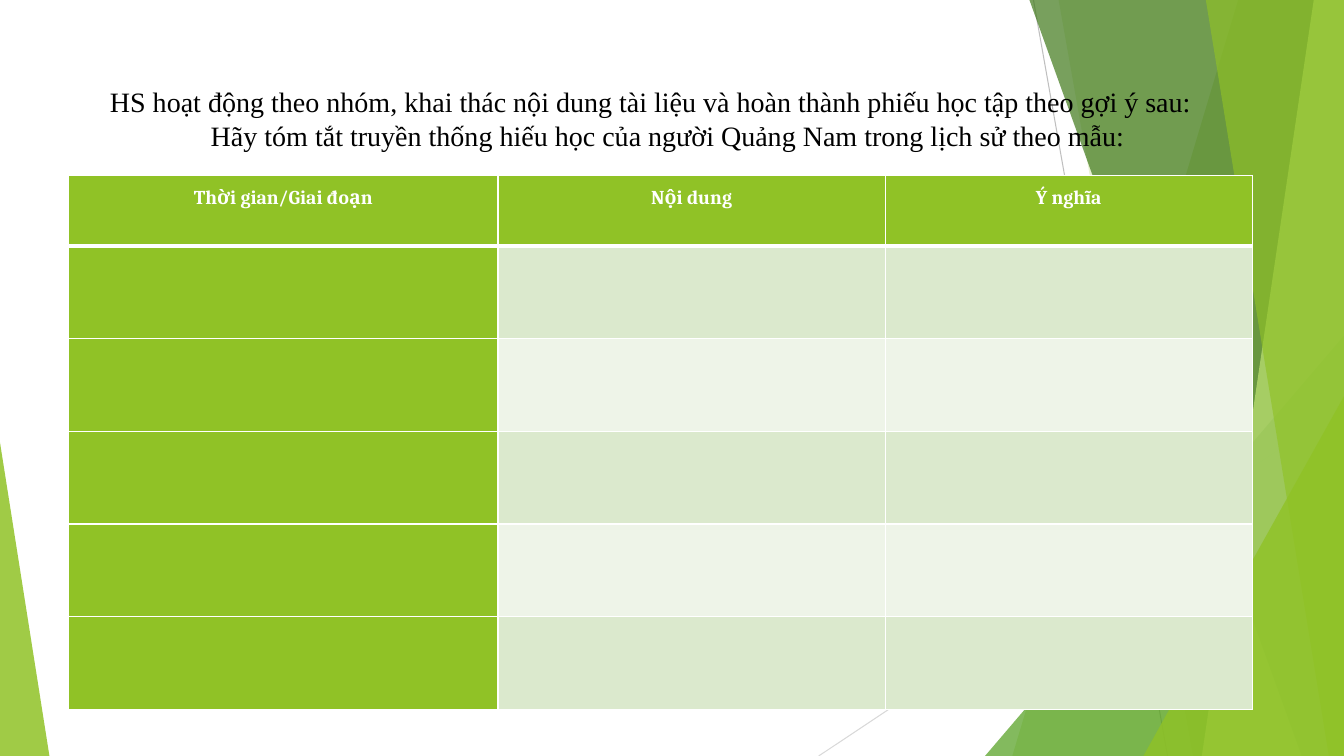
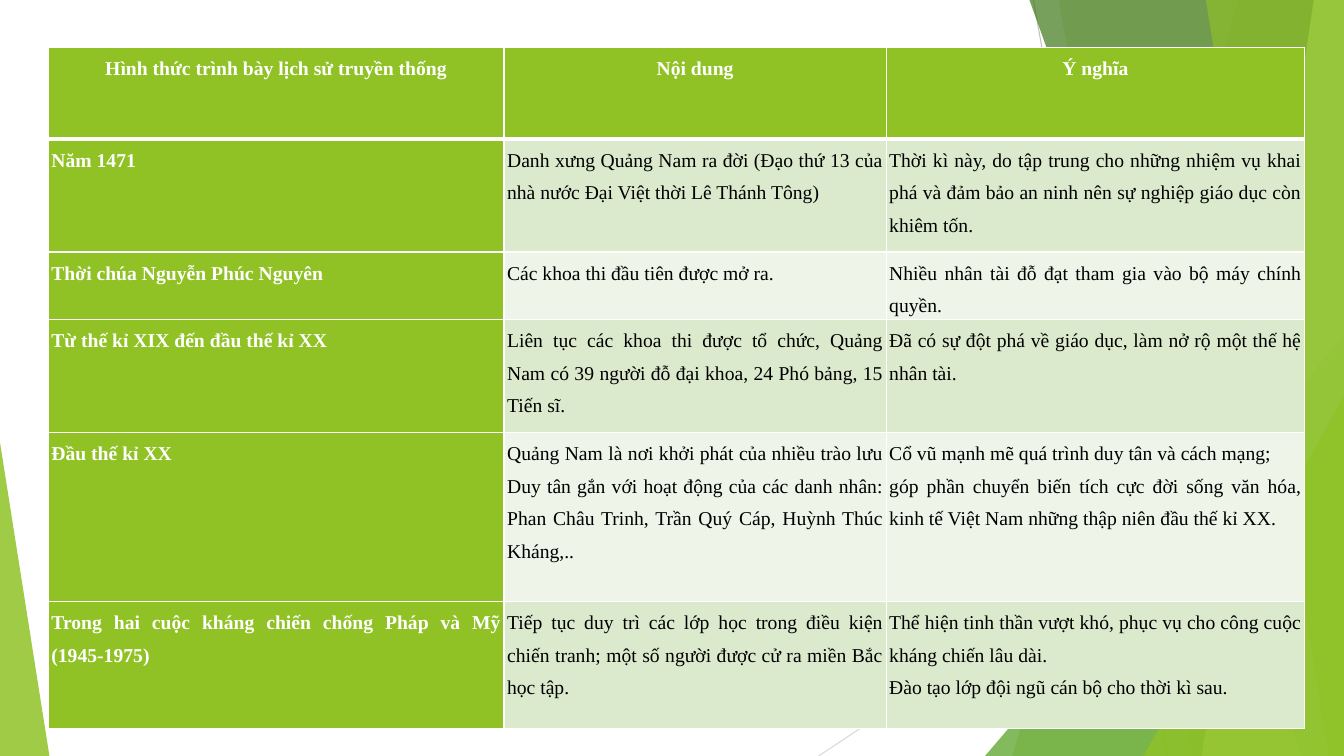
from lxml import etree
from pptx import Presentation
from pptx import util as u
from pptx.dml.color import RGBColor
from pptx.enum import shapes, text
from pptx.oxml import ns

COLOURS = {
    "lime": "90C226", "green": "54A021", "forest": "3F7819", "pale": "C0E474",
    "band": "DBE9CD", "light": "EEF4E8", "white": "FFFFFF", "black": "000000",
    "grey": "BFBFBF", "silver": "D9D9D9",
}
ALIGN = text.PP_ALIGN
SERIF = "Times New Roman"
WIDTH, HEIGHT = 13.33, 7.5


def write(frame, lines, paragraph_format, font_format, colour):
    frame.text = "\n".join(lines)
    for paragraph in frame.paragraphs:
        for name, value in paragraph_format.items():
            setattr(paragraph, name, value)
        for run in paragraph.runs:
            for name, value in font_format.items():
                setattr(run.font, name, value)
            run.font.color.rgb = RGBColor.from_string(COLOURS[colour])


def add_grid(slide, left, top, widths, heights, rows, font, inset):
    grid = slide.shapes.add_table(
        len(heights), len(widths), u.Inches(left), u.Inches(top),
        u.Inches(sum(widths)), u.Inches(sum(heights))).table
    for column, width in zip(grid.columns, widths):
        column.width = u.Inches(width)
    for r, (row, height) in enumerate(zip(rows, heights)):
        grid.rows[r].height = u.Inches(height)
        for c, lines in enumerate(row):
            cell = grid.cell(r, c)
            heading = r == 0 or c == 0
            fill = "lime" if heading else "band" if r % 2 else "light"
            margins = {"margin_left": inset, "margin_right": inset,
                       "margin_top": 0, "margin_bottom": 0}
            for name, value in margins.items():
                setattr(cell, name, u.Inches(value))
            write(cell.text_frame, lines,
                  {"alignment": ALIGN.JUSTIFY if r else ALIGN.CENTER, "line_spacing": 1.5},
                  {"size": u.Pt(14), "name": font, "bold": heading},
                  "white" if heading else "black")
            cell.fill.solid()
            cell.fill.fore_color.rgb = RGBColor.from_string(COLOURS[fill])
            properties = cell._tc.get_or_add_tcPr()
            for position, side in enumerate("LRTB"):
                thick = (r, side) in [(0, "B"), (1, "T")]
                border = etree.Element(ns.qn(f"a:ln{side}"), w=str(u.Pt(3 if thick else 1)))
                paint = etree.SubElement(border, ns.qn("a:solidFill"))
                etree.SubElement(paint, ns.qn("a:srgbClr"), val=COLOURS["white"])
                properties.insert(position, border)


prs = Presentation()
prs.slide_width, prs.slide_height = u.Inches(WIDTH), u.Inches(HEIGHT)
task = prs.slides.add_slide(prs.slide_layouts[5])
answer = prs.slides.add_slide(prs.slide_layouts[6])

backdrop = task.shapes.add_group_shape()
rays = [
    ((10.25, 0, 11.58, HEIGHT), "grey"),
    ((WIDTH, 4.03, 8.12, HEIGHT), "silver"),
]
for ends, colour in rays:
    ray = backdrop.shapes.add_connector(
        shapes.MSO_CONNECTOR.STRAIGHT, *[u.Inches(end) for end in ends])
    ray.line.color.rgb = RGBColor.from_string(COLOURS[colour])
    ray.line.width = u.Pt(0.75)
    etree.SubElement(ray.element.spPr, ns.qn("a:effectLst"))

facets = [
    ("blade", (12.28, 10.04), "lime", 30),
    ("blade", (10.5, 11.83), "lime", 20),
    ("corner", (9.77, 3.33, 3.56, 1), "green", 72),
    ("blade", (10.21, 12.91), "forest", 70),
    ("blade", (13.03, 11.92), "pale", 70),
    ("blade", (11.96, 13.18), "lime", 65),
    ("corner", (11.34, 3.93, 1.99, 1), "lime", 80),
    ("corner", (0, 4.39, 0.49, 0), "lime", 85),
]
for kind, place, colour, opacity in facets:
    if kind == "blade":
        upper, lower = place
        outline = [(u.Inches(x), u.Inches(y)) for x, y in
                   [(upper, 0), (WIDTH, 0), (WIDTH, HEIGHT), (lower, HEIGHT)]]
        builder = backdrop.shapes.build_freeform(*outline[0])
        builder.add_line_segments(outline[1:], close=True)
        facet = builder.convert_to_shape()
    else:
        left, top, width, apex = place
        facet = backdrop.shapes.add_shape(
            shapes.MSO_SHAPE.ISOSCELES_TRIANGLE, u.Inches(left), u.Inches(top),
            u.Inches(width), u.Inches(HEIGHT - top))
        facet.adjustments[0] = apex
    facet.shadow.inherit = False
    facet.line.fill.background()
    facet.fill.solid()
    facet.fill.fore_color.rgb = RGBColor.from_string(COLOURS[colour])
    tint = next(facet.element.spPr.iter(ns.qn("a:srgbClr")))
    etree.SubElement(tint, ns.qn("a:alpha"), val=str(opacity * 1000))

for number, identity in enumerate(backdrop.element.iter(ns.qn("p:cNvPr")), 100):
    identity.set("id", str(number))
prs.slide_master.shapes.element.insert(2, backdrop.element)

instruction = task.shapes.title
box = {"left": 0.99, "top": 0.79, "width": 12, "height": 0.77}
for name, value in box.items():
    setattr(instruction, name, u.Inches(value))
frame_format = {"word_wrap": True, "auto_size": text.MSO_AUTO_SIZE.NONE,
                "vertical_anchor": text.MSO_ANCHOR.MIDDLE}
for name, value in frame_format.items():
    setattr(instruction.text_frame, name, value)
write(instruction.text_frame, [
    "HS hoạt động theo nhóm, khai thác nội dung tài liệu và hoàn thành phiếu học tập theo gợi ý sau:",
    "Hãy tóm tắt truyền thống hiếu học của người Quảng Nam trong lịch sử theo mẫu:",
], {"alignment": ALIGN.JUSTIFY}, {"size": u.Pt(20), "name": SERIF}, "black")
request = instruction.text_frame.paragraphs[1]._p.get_or_add_pPr()
request.set("marL", "0")
request.set("indent", str(u.Inches(1)))

worksheet = [[["Thời gian/Giai đoạn"], ["Nội dung"], ["Ý nghĩa"]]] + [[[], [], []]] * 5
add_grid(task, 0.68, 1.74, [4.26, 3.84, 3.64], [0.7] + [0.92] * 5, worksheet, "Cambria", 0.07)

history = [
    [["Hình thức trình bày lịch sử truyền thống"], ["Nội dung"], ["Ý nghĩa"]],
    [["Năm 1471"],
     ["Danh xưng Quảng Nam ra đời (Đạo thứ 13 của nhà nước Đại Việt thời Lê Thánh Tông)"],
     ["Thời kì này, do tập trung cho những nhiệm vụ khai phá và đảm bảo an ninh "
      "nên sự nghiệp giáo dục còn khiêm tốn."]],
    [["Thời chúa Nguyễn Phúc Nguyên"],
     ["Các khoa thi đầu tiên được mở ra."],
     ["Nhiều nhân tài đỗ đạt tham gia vào bộ máy chính quyền."]],
    [["Từ thế kỉ XIX đến đầu thế kỉ XX"],
     ["Liên tục các khoa thi được tổ chức, Quảng Nam có 39 người đỗ đại khoa, "
      "24 Phó bảng, 15 Tiến sĩ."],
     ["Đã có sự đột phá về giáo dục, làm nở rộ một thế hệ nhân tài."]],
    [["Đầu thế kỉ XX"],
     ["Quảng Nam là nơi khởi phát của nhiều trào lưu Duy tân gắn với hoạt động của "
      "các danh nhân: Phan Châu Trinh, Trần Quý Cáp, Huỳnh Thúc Kháng,.."],
     ["Cổ vũ mạnh mẽ quá trình duy tân và cách mạng;",
      "góp phần chuyển biến tích cực đời sống văn hóa, kinh tế Việt Nam "
      "những thập niên đầu thế kỉ XX."]],
    [["Trong hai cuộc kháng chiến chống Pháp và Mỹ (1945-1975)"],
     ["Tiếp tục duy trì các lớp học trong điều kiện chiến tranh; "
      "một số người được cử ra miền Bắc học tập."],
     ["Thể hiện tinh thần vượt khó, phục vụ cho công cuộc kháng chiến lâu dài.",
      "Đào tạo lớp đội ngũ cán bộ cho thời kì sau."]],
]
add_grid(answer, 0.48, 0.47, [4.52, 3.79, 4.15], [0.91, 1.12, 0.67, 1.12, 1.68, 1.26],
         history, SERIF, 0.03)

prs.save("out.pptx")
